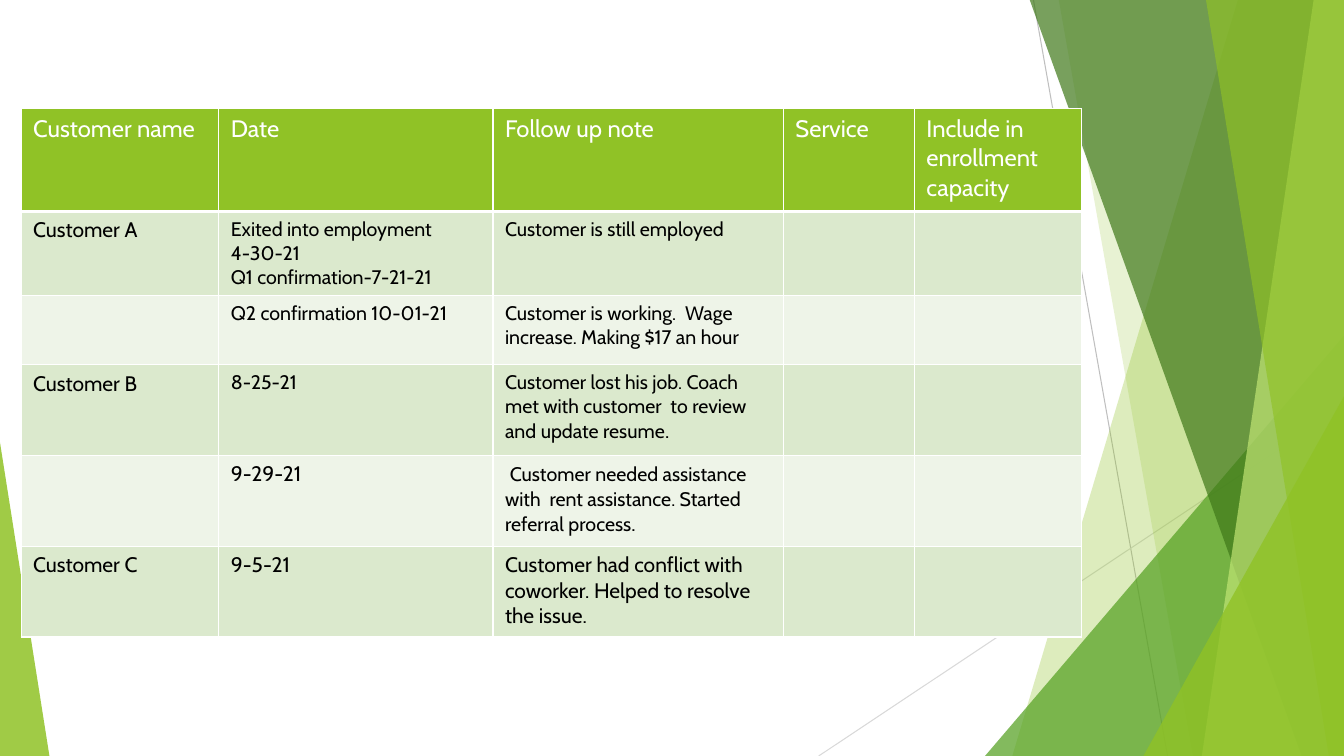
from lxml import etree
from pptx import Presentation
from pptx.dml.color import RGBColor
from pptx.enum.shapes import MSO_CONNECTOR, MSO_SHAPE
from pptx.oxml.ns import qn
from pptx.util import Inches, Pt

LINE = MSO_CONNECTOR.STRAIGHT
TRI = MSO_SHAPE.ISOSCELES_TRIANGLE
GREEN, WHITE, BLACK = "90C226", "FFFFFF", "000000"
BANDS = ["DBE9CD", "EEF4E8"]
TOP, RIGHT, BASE = -0.01, 13.33, 7.5


def color(code):
    return RGBColor.from_string(code)


class Deck:
    """Holds the style and the current slide."""
    font = "Cabin"
    pad = {"margin_left": Inches(0.12), "margin_right": Inches(0.12),
           "margin_top": Inches(0.06), "margin_bottom": Inches(0.06)}

    def __init__(self):
        self.prs = Presentation()
        self.prs.slide_width = Inches(RIGHT)
        self.prs.slide_height = Inches(BASE)
        self.slide = self.prs.slides.add_slide(self.prs.slide_layouts[6])
        self.shapes = self.slide.shapes

    def line(self, start, end, code):
        item = self.shapes.add_connector(LINE, *map(Inches, start + end))
        item.line.color.rgb = color(code)
        item.line.width = Pt(0.75)
        etree.SubElement(item._element.spPr, qn("a:effectLst"))

    def paint(self, shape, code, alpha):
        shape.shadow.inherit = False
        shape.fill.solid()
        shape.fill.fore_color.rgb = color(code)
        shape.line.fill.background()
        tint = shape._element.spPr.find(".//" + qn("a:srgbClr"))
        etree.SubElement(tint, qn("a:alpha"), val=str(alpha * 1000))

    def panel(self, top, left, foot, code, alpha):
        """Band from the given top edge to the right side of the slide."""
        path = [(RIGHT, TOP), (RIGHT, BASE), (foot, BASE)]
        form = self.shapes.build_freeform(Inches(top), Inches(left))
        form.add_line_segments([(Inches(x), Inches(y)) for x, y in path])
        self.paint(form.convert_to_shape(), code, alpha)

    def wedge(self, box, peak, code, alpha):
        shape = self.shapes.add_shape(TRI, *map(Inches, box))
        shape.adjustments[0] = peak
        self.paint(shape, code, alpha)

    def edges(self, cell, base):
        props = cell._tc.get_or_add_tcPr()
        for spot, side in enumerate("LRTB"):
            width = Pt(base if side == "B" else 1)
            edge = etree.Element(qn("a:ln" + side), w=str(width))
            fill = etree.SubElement(edge, qn("a:solidFill"))
            etree.SubElement(fill, qn("a:srgbClr"), val=WHITE)
            props.insert(spot, edge)

    def cell(self, cell, paras, fill, ink, base):
        for name, value in self.pad.items():
            setattr(cell, name, value)
        cell.fill.solid()
        cell.fill.fore_color.rgb = color(fill)
        self.edges(cell, base)
        frame = cell.text_frame
        for num, runs in enumerate(paras):
            para = frame.add_paragraph() if num else frame.paragraphs[0]
            for text, size in runs:
                run = para.add_run()
                run.text = text
                style = {"name": self.font, "size": Pt(size)}
                for name, value in style.items():
                    setattr(run.font, name, value)
                run.font.color.rgb = color(ink)

    def table(self, spot, cols, highs, rows):
        size = (sum(cols), sum(highs))
        grid = self.shapes.add_table(len(highs), len(cols),
                                     *map(Inches, spot + size)).table
        for col, width in zip(grid.columns, cols):
            col.width = Inches(width)
        for row, high in zip(grid.rows, highs):
            row.height = Inches(high)
        for r, row in enumerate(rows):
            head = r == 0
            fill = GREEN if head else BANDS[(r - 1) % 2]
            for c in range(len(cols)):
                paras = row[c] if c < len(row) else []
                self.cell(grid.cell(r, c), paras, fill,
                          WHITE if head else BLACK, 3 if head else 1)


def text(size, *lines):
    return [[(line, size)] for line in lines]


HEADS = ["Customer name", "Date", "Follow up note", "Service",
         "Include in enrollment capacity"]
ROWS = [
    [text(17, head) for head in HEADS],
    [text(15, "Customer A"),
     text(14, "Exited into employment", "4-30-21", "Q1 confirmation-7-21-21"),
     text(14, "Customer is still employed")],
    [[], text(14, "Q2 confirmation 10-01-21"),
     text(14, "Customer is working.  Wage increase. Making $17 an hour")],
    [text(15, "Customer B"), text(14, "8-25-21"),
     [[("Customer lost his job. Coach met with customer  to review "
        "and update resume", 14), (".", 15)]]],
    [[], text(15, "9-29-21"),
     [[(" ", 15), ("Customer needed assistance with  rent assistance. "
                   "Started referral process", 14), (".", 15)]]],
    [text(15, "Customer C"), text(15, "9-5-21"),
     text(15, "Customer had conflict with coworker. "
              "Helped to resolve the issue.")],
]


def main():
    deck = Deck()

    # Thin lines behind the green bands
    deck.line((10.25, 0), (11.58, BASE), "BFBFBF")
    deck.line((RIGHT, 4.03), (8.12, BASE), "D9D9D9")

    # Translucent bands on the right
    deck.panel(12.28, TOP, 10.04, GREEN, 30)
    deck.panel(10.5, TOP, 11.83, GREEN, 20)
    deck.wedge((9.77, 3.33, 3.56, 4.17), 1, "54A021", 72)
    deck.panel(10.21, TOP, 12.91, "3F7819", 70)
    deck.panel(13.03, TOP, 11.92, "C0E474", 70)
    deck.panel(11.96, TOP, 13.18, GREEN, 65)
    deck.wedge((11.34, 3.93, 1.99, 3.57), 1, GREEN, 80)

    # Wedge in the lower left corner
    deck.wedge((0, 4.39, 0.49, 3.11), 0, GREEN, 85)

    # Follow-up table
    deck.table((0.21, 1.08), [1.96, 2.72, 2.88, 1.3, 1.66],
               [1.02, 0.8, 0.69, 0.9, 0.9, 0.9], ROWS)

    deck.prs.save("out.pptx")


if __name__ == "__main__":
    main()
